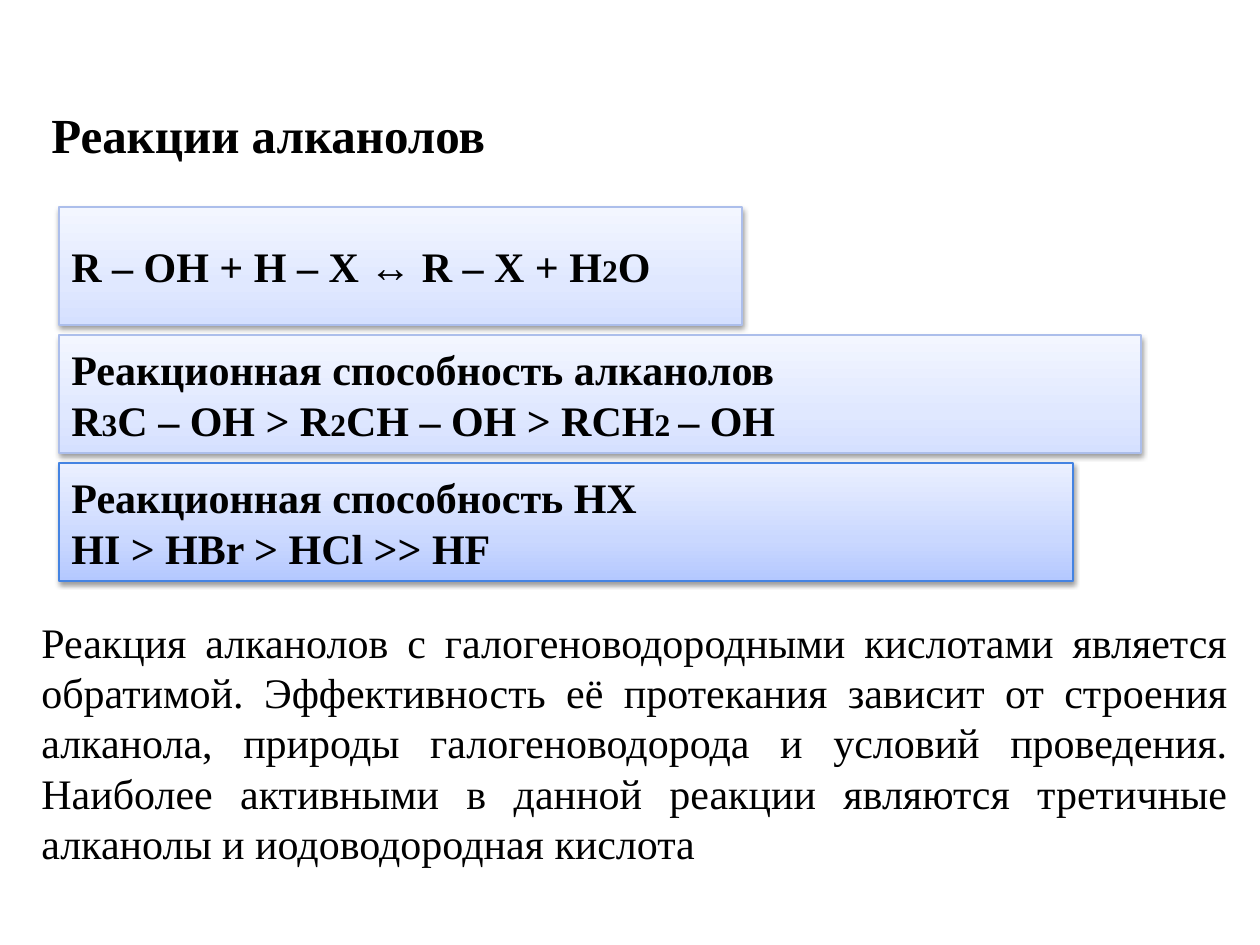
from copy import deepcopy
from dataclasses import dataclass

from lxml.etree import SubElement as Sub
from pptx import Presentation
from pptx.dml.color import RGBColor as Rgb
from pptx.enum.shapes import MSO_SHAPE as Shape
from pptx.enum.text import MSO_ANCHOR as Anchor, MSO_AUTO_SIZE as Auto, PP_ALIGN as Align
from pptx.oxml.ns import qn
from pptx.util import Emu, Pt


@dataclass(frozen=True)
class Theme:
    font: str = "Times New Roman"
    ink: str = "000000"
    title: int = 28
    body: int = 24
    sub: int = 18
    pale: tuple = ("D5E0FF", "E0E8FF", "F3F6FF")
    deep: tuple = ("B4C8FF", "CAD8FF", "EBF0FF")
    stops: tuple = (0, 0.35, 1)
    soft: str = "ACBEEB"
    bold: str = "4483E2"


def px(num):
    return Emu(round(num * 914400 / 126))


def write(frame, lines, theme, size, bold=False, align=Align.LEFT):
    for i, line in enumerate(lines):
        para = frame.paragraphs[0] if i == 0 else frame.add_paragraph()
        para.alignment = align
        for j, part in enumerate(line.split("|")):
            run = para.add_run()
            run.text = part
            font = run.font
            font.name = theme.font
            font.size = Pt(theme.sub if j % 2 else size)
            font.bold = bold
            font.color.rgb = Rgb.from_string(theme.ink)


class Deck:
    def __init__(self, theme):
        self.theme = theme
        self.show = Presentation()
        self.show.slide_width, self.show.slide_height = px(1260), px(945)
        self.slide = self.show.slides.add_slide(self.show.slide_layouts[6])

    def text(self, lines, x, y, w, h, wrap=True, **style):
        box = self.slide.shapes.add_textbox(*map(px, (x, y, w, h)))
        frame = box.text_frame
        frame.word_wrap = wrap
        frame.auto_size = Auto.SHAPE_TO_FIT_TEXT
        write(frame, lines, self.theme, **style)

    def panel(self, lines, x, y, w, h, fill, edge):
        box = self.slide.shapes.add_shape(Shape.RECTANGLE, *map(px, (x, y, w, h)))
        self.blend(box, fill)
        box.line.color.rgb = Rgb.from_string(edge)
        box.line.width = Pt(0.75)
        self.shade(box)
        frame = box.text_frame
        frame.word_wrap = True
        frame.vertical_anchor = Anchor.MIDDLE
        write(frame, lines, self.theme, self.theme.body, bold=True)

    def blend(self, box, tints):
        box.fill.gradient()
        box.fill.gradient_angle = 90
        stops = box._element.spPr.find(".//" + qn("a:gsLst"))
        stops.append(deepcopy(stops[0]))
        for stop, tint, pos in zip(box.fill.gradient_stops, tints, self.theme.stops):
            stop.color.rgb = Rgb.from_string(tint)
            stop.position = pos

    def shade(self, box):
        box.shadow.inherit = False
        list_ = box._element.spPr.find(qn("a:effectLst"))
        drop = Sub(list_, qn("a:outerShdw"), blurRad="40000", dist="20000",
                   dir="5400000", rotWithShape="0")
        tint = Sub(drop, qn("a:srgbClr"), val=self.theme.ink)
        Sub(tint, qn("a:alpha"), val="38000")


def main():
    theme = Theme()
    deck = Deck(theme)
    panels = [
        (683, theme.pale, theme.soft, ["R – OH + H – X ↔ R – X + H|2|O"]),
        (1082, theme.pale, theme.soft, [
            "Реакционная способность алканолов",
            "R|3|С – OH > R|2|CH – OH > RCH|2 |– OH"]),
        (1014, theme.deep, theme.bold, [
            "Реакционная способность HX",
            "HI > HBr > HCl >> HF"]),
    ]
    for i, (wide, fill, edge, lines) in enumerate(panels):
        deck.panel(lines, 59, 207 + 128 * i, wide, 118, fill, edge)
    deck.text([
        "Реакция алканолов с галогеноводородными кислотами является обратимой. "
        "Эффективность её протекания зависит от строения алканола, природы "
        "галогеноводорода и условий проведения. Наиболее активными в данной "
        "реакции являются третичные алканолы и иодоводородная кислота"],
        29, 610, 1211, 267, size=theme.body, align=Align.JUSTIFY)
    deck.text(["Реакции алканолов"], 39, 98, 464, 72, wrap=False,
              size=theme.title, bold=True)
    deck.show.save("out.pptx")


if __name__ == "__main__":
    main()
